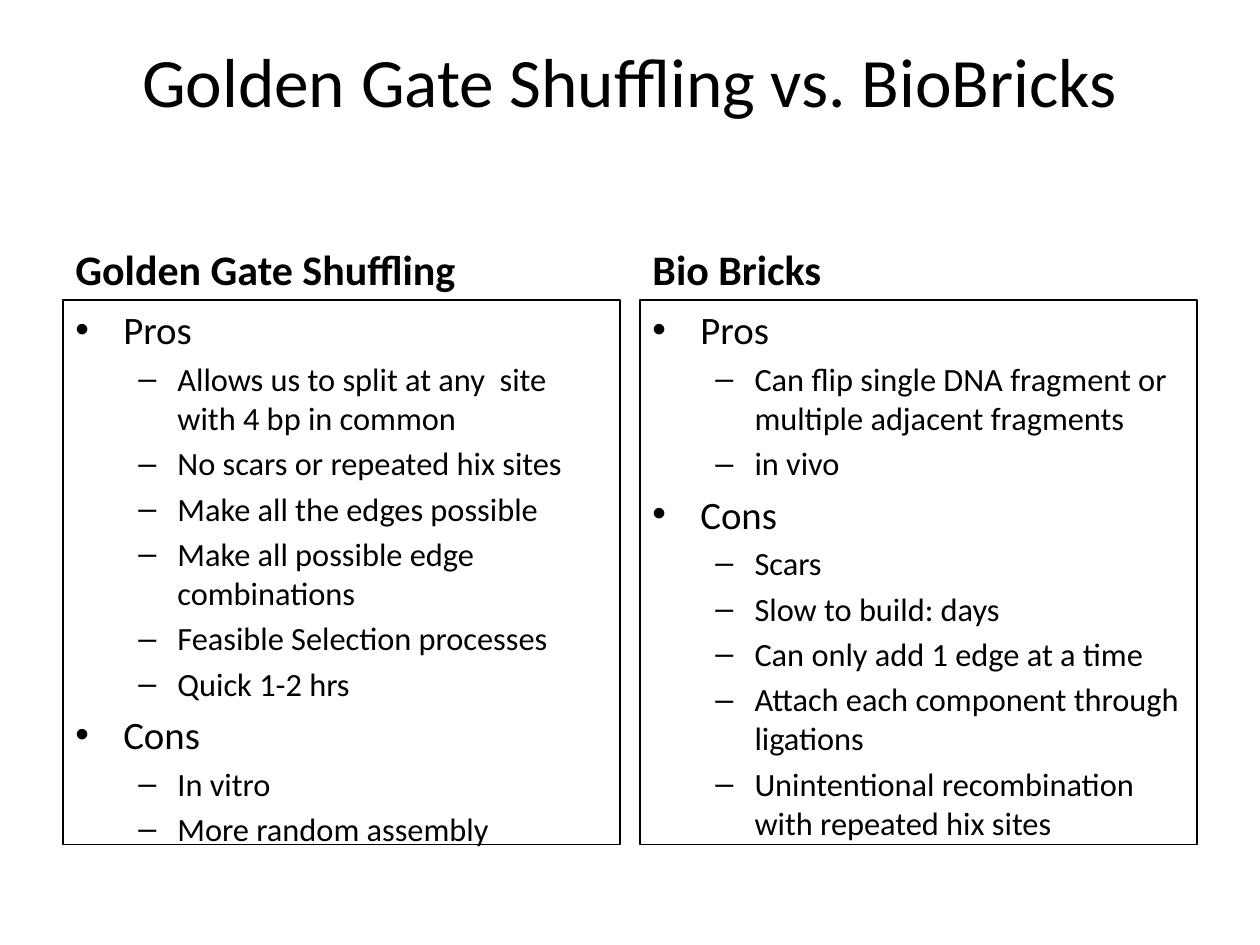
"""Build a slide comparing the pros and cons of two DNA assembly methods."""
from lxml import etree
from pptx import Presentation
from pptx import util as u
from pptx.dml.color import RGBColor
from pptx.enum import text
from pptx.oxml import ns

BLACK = RGBColor(0, 0, 0)
FONT = "Calibri"
WIDTH, HEIGHT = 10, 7.5
MARGIN, GAP = 0.5, 0.16
COL_WIDTH = (WIDTH - 2 * MARGIN - GAP) / 2
HEAD_TOP, HEAD_HEIGHT, LIST_HEIGHT = 1.68, 0.7, 4.32
LEVELS = [
    {"size": 22.2, "indent": 0.38, "hang": 0.38, "bullet": "•"},
    {"size": 18.5, "indent": 0.81, "hang": 0.31, "bullet": "–"},
]
METHODS = [
    ("Golden Gate Shuffling", [
        ("Pros", [
            "Allows us to split at any  site with 4 bp in common",
            "No scars or repeated hix sites",
            "Make all the edges possible",
            "Make all possible edge combinations",
            "Feasible Selection processes",
            "Quick 1-2 hrs",
        ]),
        ("Cons", ["In vitro", "More random assembly"]),
    ]),
    ("Bio Bricks", [
        ("Pros", [
            "Can flip single DNA fragment or multiple adjacent fragments",
            "in vivo",
        ]),
        ("Cons", [
            "Scars",
            "Slow to build: days",
            "Can only add 1 edge at a time",
            "Attach each component through ligations",
            "Unintentional recombination with repeated hix sites",
        ]),
    ]),
]


def write(p, content, size, bold=False, align=text.PP_ALIGN.LEFT, before=0):
    """Add one formatted run to a paragraph."""
    p.alignment = align
    p.space_before = u.Pt(before)
    r = p.add_run()
    r.text = content
    r.font.name, r.font.size, r.font.bold = FONT, u.Pt(size), bold
    r.font.color.rgb = BLACK


def add_bullet(p, char, indent, hang):
    """Give a paragraph a bullet with a hanging indent."""
    pPr = p._p.get_or_add_pPr()
    pPr.set("marL", str(u.Inches(indent)))
    pPr.set("indent", str(-u.Inches(hang)))
    etree.SubElement(pPr, ns.qn("a:buFont"), typeface="Arial")
    etree.SubElement(pPr, ns.qn("a:buChar"), char=char)


def add_box(s, left, top, height, anchor):
    """Add a wrapping text box one column wide."""
    sp = s.shapes.add_textbox(*map(u.Inches, (left, top, COL_WIDTH, height)))
    tf = sp.text_frame
    tf.word_wrap = True
    tf.vertical_anchor = anchor
    return sp


def add_title(s, content):
    """Place the title at the top of its placeholder."""
    sp = s.shapes.title
    sp.left, sp.top, sp.width, sp.height = map(
        u.Inches, (MARGIN, 0.3, WIDTH - 2 * MARGIN, 1.25))
    tf = sp.text_frame
    tf.vertical_anchor = text.MSO_ANCHOR.TOP
    tf.margin_top = 0
    write(tf.paragraphs[0], content, 39.6, align=text.PP_ALIGN.CENTER)


def add_heading(s, left, content):
    """Add the bold heading of a column."""
    sp = add_box(s, left, HEAD_TOP, HEAD_HEIGHT, text.MSO_ANCHOR.BOTTOM)
    write(sp.text_frame.paragraphs[0], content, 24, bold=True)


def add_list(s, left, groups):
    """Add an outlined box with a two-level bullet list."""
    sp = add_box(s, left, HEAD_TOP + HEAD_HEIGHT, LIST_HEIGHT, text.MSO_ANCHOR.TOP)
    sp.line.color.rgb = BLACK
    sp.line.width = u.Pt(0.75)
    tf = sp.text_frame
    rows = [row for name, points in groups
            for row in [(0, name)] + [(1, point) for point in points]]
    for i, (level, content) in enumerate(rows):
        p = tf.add_paragraph() if i else tf.paragraphs[0]
        p.level = level
        style = LEVELS[level]
        write(p, content, style["size"], before=0.2 * style["size"])
        add_bullet(p, style["bullet"], style["indent"], style["hang"])


def main():
    """Build and save the slide."""
    prs = Presentation()
    prs.slide_width, prs.slide_height = u.Inches(WIDTH), u.Inches(HEIGHT)
    s = prs.slides.add_slide(prs.slide_layouts[5])
    add_title(s, "Golden Gate Shuffling vs. BioBricks")
    for col, (name, groups) in enumerate(METHODS):
        left = MARGIN + col * (COL_WIDTH + GAP)
        add_heading(s, left, name)
        add_list(s, left, groups)
    prs.save("out.pptx")


if __name__ == "__main__":
    main()
